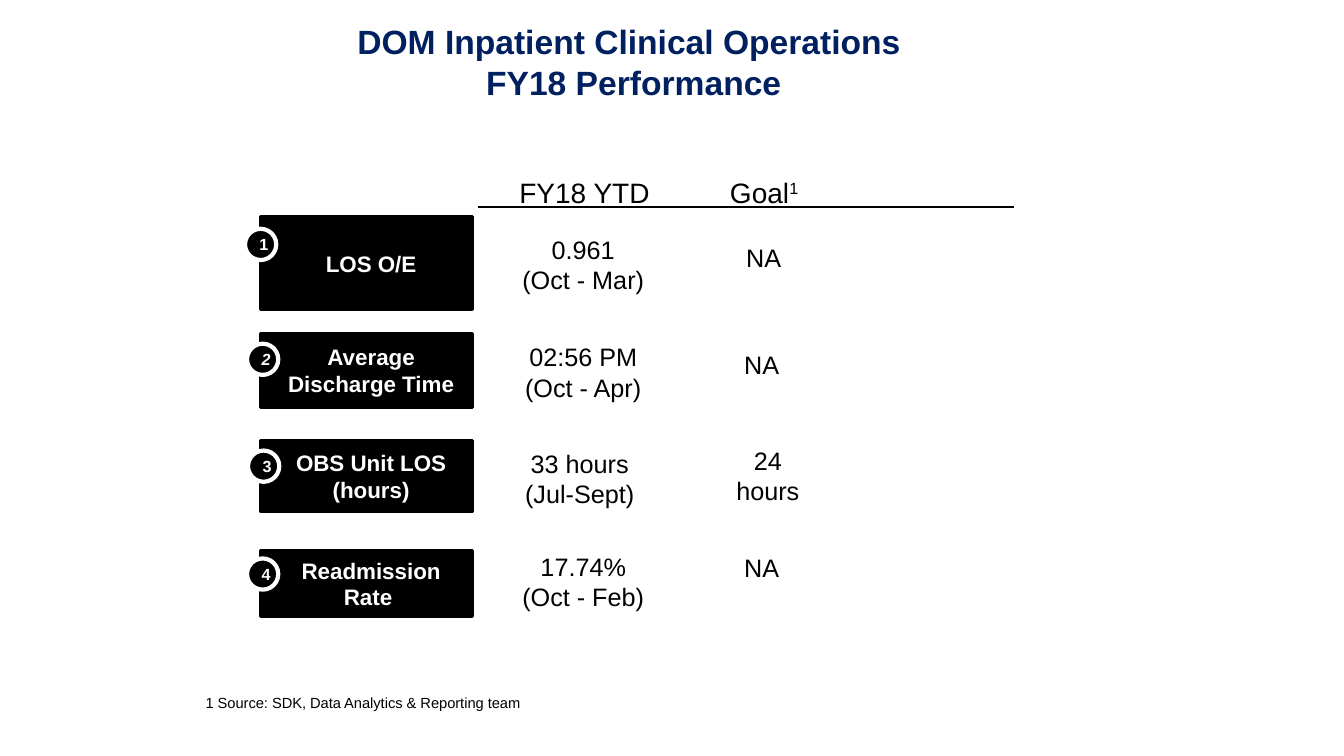
from lxml import etree
from pptx import Presentation
from pptx import util as u
from pptx.dml.color import RGBColor
from pptx.enum import shapes, text
from pptx.oxml import ns

NAVY = RGBColor(0x00, 0x20, 0x60)
BLACK = RGBColor(0x00, 0x00, 0x00)
WHITE = RGBColor(0xFF, 0xFF, 0xFF)
NO_INSETS = (0, 0, 0, 0)
DEFAULT_INSETS = (0.1, 0.05, 0.1, 0.05)
LABEL_INSETS = (0.19, 0.05, 0.1, 0.05)


class PerformanceSlide:
    """Adds consistently styled elements to one slide."""

    font_name = "Arial"

    def __init__(self, slide):
        self.slide = slide

    def set_text(self, shape, content, size, color, bold=False, italic=False,
                 align=text.PP_ALIGN.CENTER, anchor=text.MSO_ANCHOR.TOP,
                 insets=DEFAULT_INSETS):
        frame = shape.text_frame
        frame.text = content
        frame.word_wrap = True
        frame.auto_size = text.MSO_AUTO_SIZE.NONE
        frame.vertical_anchor = anchor
        (frame.margin_left, frame.margin_top,
         frame.margin_right, frame.margin_bottom) = map(u.Inches, insets)
        for paragraph in frame.paragraphs:
            paragraph.alignment = align
            for run in paragraph.runs:
                self.format_run(run, size, color, bold, italic)

    def format_run(self, run, size, color, bold=False, italic=False):
        run.font.name = self.font_name
        run.font.size = u.Pt(size)
        run.font.color.rgb = color
        run.font.bold = bold
        run.font.italic = italic

    def title(self, content, box):
        shape = self.slide.shapes.title
        shape.left, shape.top, shape.width, shape.height = map(u.Inches, box)
        self.set_text(shape, content, 24, NAVY, bold=True,
                      anchor=text.MSO_ANCHOR.MIDDLE)

    def textbox(self, content, box, size, **style):
        shape = self.slide.shapes.add_textbox(*map(u.Inches, box))
        self.set_text(shape, content, size, BLACK, **style)
        return shape

    def header(self, content, left, superscript=""):
        shape = self.textbox(content, (left, 1.74, 1.42, 0.24), 20,
                             align=text.PP_ALIGN.LEFT, insets=NO_INSETS)
        if superscript:
            run = shape.text_frame.paragraphs[0].add_run()
            run.text = superscript
            self.format_run(run, 20, BLACK)
            run.font._element.set("baseline", "30000")

    def value(self, content, left, top, height):
        self.textbox(content, (left, top, 1.27, height), 18, insets=NO_INSETS)

    def filled_shape(self, kind, content, box, size, line_color, line_width, **style):
        shape = self.slide.shapes.add_shape(kind, *map(u.Inches, box))
        shape.shadow.inherit = False
        shape.fill.solid()
        shape.fill.fore_color.rgb = BLACK
        shape.line.color.rgb = line_color
        shape.line.width = u.Pt(line_width)
        self.set_text(shape, content, size, WHITE, bold=True,
                      anchor=text.MSO_ANCHOR.MIDDLE, **style)

    def label(self, content, top, height):
        self.filled_shape(shapes.MSO_SHAPE.RECTANGLE, content,
                          (2.58, top, 2.11, height), 16, BLACK, 2,
                          insets=LABEL_INSETS)

    def badge(self, number, left, top, italic):
        self.filled_shape(shapes.MSO_SHAPE.OVAL, str(number),
                          (left, top, 0.31, 0.31), 11.5, WHITE, 3, italic=italic)

    def rule(self, left, right, top):
        connector = self.slide.shapes.add_connector(
            shapes.MSO_CONNECTOR.STRAIGHT,
            *map(u.Inches, (left, top, right, top)))
        connector.line.color.rgb = BLACK
        connector.line.width = u.Pt(1.5)
        etree.SubElement(connector._element.spPr, ns.qn("a:effectLst"))


def main():
    presentation = Presentation()
    presentation.slide_width = u.Inches(13.33)
    presentation.slide_height = u.Inches(7.5)
    page = PerformanceSlide(
        presentation.slides.add_slide(presentation.slide_layouts[5]))

    page.title("DOM Inpatient Clinical Operations \vFY18 Performance",
               (2.32, 0.48, 7.93, 0.26))
    page.textbox("1 Source: SDK, Data Analytics & Reporting team",
                 (1.94, 6.83, 5.45, 0.28), 10.5, align=text.PP_ALIGN.LEFT)
    page.header("FY18 YTD", 5.15)
    page.rule(4.74, 10.06, 2.05)
    page.header("Goal", 7.24, superscript="1")

    metrics = [
        ("LOS O/E", 2.15, 0.92, 2.43, 2.27, "0.961\n(Oct - Mar)", 2.32),
        ("Average Discharge Time", 3.31, 0.73, 2.45, 3.41,
         "02:56 PM\n(Oct - Apr)", 3.39),
        ("OBS Unit LOS (hours)", 4.37, 0.71, 2.46, 4.47,
         "33 hours \n(Jul-Sept) ", 4.45),
        ("Readmission Rate ", 5.46, 0.66, 2.45, 5.54,
         "17.74%\n(Oct - Feb)", 5.47),
    ]
    for number, metric in enumerate(metrics, 1):
        name, top, height, badge_left, badge_top, result, result_top = metric
        page.label(name, top, height)
        page.badge(number, badge_left, badge_top, italic=number == 2)
        page.value(result, 5.15, result_top, 0.4)

    for left, top in [(6.94, 2.4), (6.92, 3.47), (6.92, 5.48)]:
        page.value("NA", left, top, 0.24)
    page.textbox("24 hours", (7.17, 4.37, 0.89, 0.71), 18)

    presentation.save("out.pptx")


if __name__ == "__main__":
    main()
